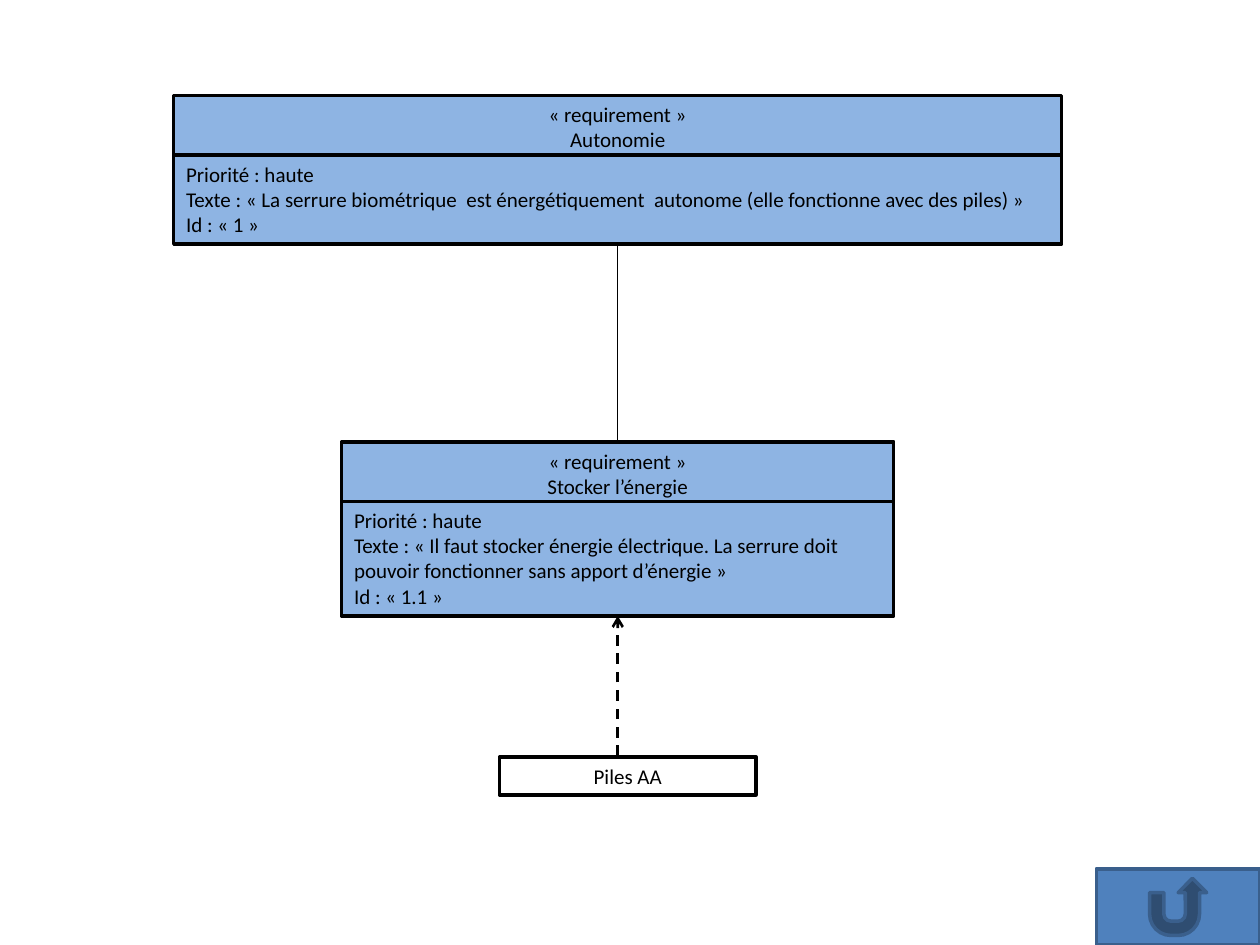
from lxml import etree
from pptx import Presentation
from pptx.dml.color import RGBColor
from pptx.enum import dml, shapes, text
from pptx.oxml.ns import qn
from pptx.util import Pt


def rgb(value):
    return RGBColor.from_string(value)


def add_box(x, y, w, h, lines, align, fill=None):
    sp = s.shapes.add_textbox(Pt(x), Pt(y), Pt(w), Pt(h))
    if fill:
        sp.fill.solid()
        sp.fill.fore_color.rgb = rgb(fill)
    sp.line.color.rgb = rgb("000000")
    sp.line.width = Pt(2)
    tf = sp.text_frame
    tf.word_wrap = True
    tf.auto_size = text.MSO_AUTO_SIZE.SHAPE_TO_FIT_TEXT
    tf.vertical_anchor = text.MSO_ANCHOR.TOP
    tf.text = "\n".join(lines)
    for p in tf.paragraphs:
        p.alignment = align
        p.font.name = "Calibri"
        p.font.size = Pt(12)
        p.font.color.rgb = rgb("000000")


prs = Presentation()
prs.slide_width = Pt(720)
prs.slide_height = Pt(540)
s = prs.slides.add_slide(prs.slide_layouts[6])

LEFT = text.PP_ALIGN.LEFT
CENTER = text.PP_ALIGN.CENTER
AXIS = 353

requirements = [
    (252.5, 315.5, 65.5, "Stocker l’énergie", "1.1",
     "Il faut stocker énergie électrique. La serrure doit pouvoir fonctionner sans apport d’énergie"),
    (54.5, 507.5, 51, "Autonomie", "1",
     "La serrure biométrique  est énergétiquement  autonome (elle fonctionne avec des piles)"),
]
for y, w, h, name, number, wording in requirements:
    x = AXIS - w / 2
    add_box(x, y, w, 36.5, ["« requirement »", name], CENTER, "8EB4E3")
    details = ["Priorité : haute", f"Texte : « {wording} »", f"Id : « {number} »"]
    add_box(x, y + 34, w, h, details, LEFT, "8EB4E3")

add_box(285.5, 432.5, 146.5, 21.8, ["Piles AA"], CENTER)

for start, end, width, dashed in [(252.5, 139, 0.75, False), (432, 352, 1.5, True)]:
    c = s.shapes.add_connector(shapes.MSO_CONNECTOR.STRAIGHT, Pt(AXIS), Pt(start), Pt(AXIS), Pt(end))
    c.line.color.rgb = rgb("000000")
    c.line.width = Pt(width)
    if dashed:
        c.line.dash_style = dml.MSO_LINE.DASH
        etree.SubElement(c.line._get_or_add_ln(), qn("a:tailEnd"), type="arrow")
    etree.SubElement(c._element.spPr, qn("a:effectLst"))

sp = s.shapes.add_shape(shapes.MSO_SHAPE.ACTION_BUTTON_RETURN, Pt(626.5), Pt(496.5), Pt(93.5), Pt(43.5))
sp.shadow.inherit = False
sp.fill.solid()
sp.fill.fore_color.rgb = rgb("4F81BD")
sp.line.color.rgb = rgb("3A5F8C")
sp.line.width = Pt(2)

prs.save("out.pptx")
